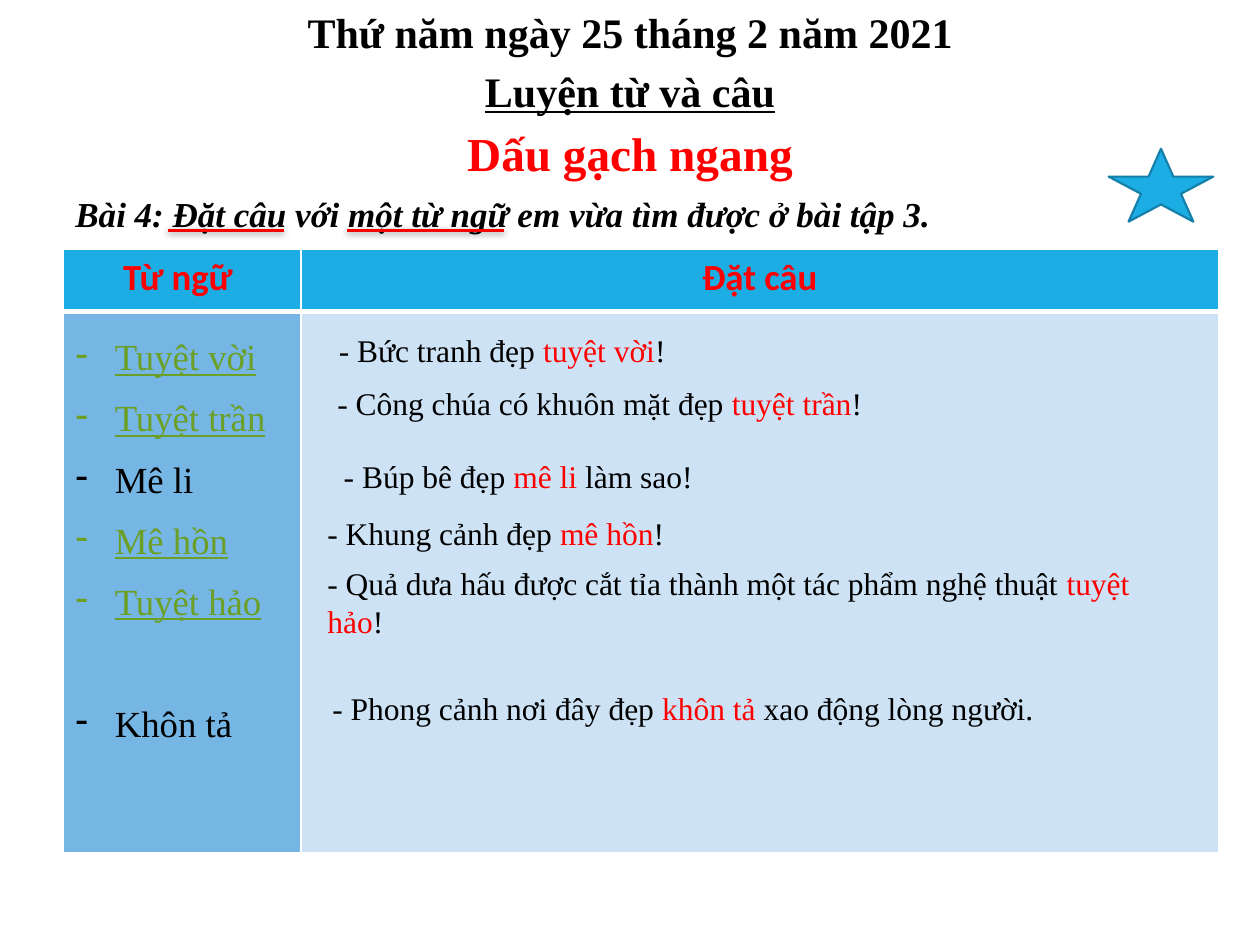
import lxml.etree
import pptx
import pptx.dml.color
import pptx.enum.shapes
import pptx.enum.text
import pptx.oxml
import pptx.oxml.ns
import pptx.util

Cm = pptx.util.Cm
Pt = pptx.util.Pt
qn = pptx.oxml.ns.qn
colours = {
    "black": "000000", "red": "FF0000", "green": "6B9F25", "white": "FFFFFF",
    "blue": "1CADE4", "outline": "1580A9", "words": "75B6E5", "sentences": "CDE3F5",
}
rgb = {name: pptx.dml.color.RGBColor.from_string(value) for name, value in colours.items()}
serif = "Times New Roman"
centre = pptx.enum.text.PP_ALIGN.CENTER


def add_run(paragraph, text, colour, **formats):
    run = paragraph.add_run()
    run.text = text
    run.font.color.rgb = rgb[colour]
    for name, value in formats.items():
        setattr(run.font, name, value)


def add_text_box(left, top, width, height, **margins):
    frame = slide.shapes.add_textbox(Cm(left), Cm(top), Cm(width), Cm(height)).text_frame
    frame.word_wrap = True
    for name, value in margins.items():
        setattr(frame, name, Cm(value))
    return frame.paragraphs[0]


presentation = pptx.Presentation()
presentation.slide_width = Cm(25.4)
presentation.slide_height = Cm(19.05)
slide = presentation.slides.add_slide(presentation.slide_layouts[6])

instruction = add_text_box(1.27, 3.76, 18.21, 1.11)
add_run(instruction, "Bài 4: Đặt câu với một từ ngữ em vừa tìm được ở bài tập 3.", "black",
        name=serif, size=Pt(20), bold=True, italic=True)

table = slide.shapes.add_table(2, 2, Cm(1.27), Cm(5.03), Cm(23.29), Cm(12.17)).table
table.first_row = False
table.horz_banding = False
for column, width in zip(table.columns, (4.8, 18.49)):
    column.width = Cm(width)
for row, height in zip(table.rows, (1.25, 10.92)):
    row.height = Cm(height)

fills = (("blue", "blue"), ("words", "sentences"))
for row_index, row_fills in enumerate(fills):
    for column_index, fill in enumerate(row_fills):
        cell = table.cell(row_index, column_index)
        properties = cell._tc.get_or_add_tcPr()
        for side in "LRTB":
            thick = (row_index, side) in ((0, "B"), (1, "T"))
            border = lxml.etree.SubElement(properties, qn("a:ln" + side), w=str(Pt(3 if thick else 1)))
            solid = lxml.etree.SubElement(border, qn("a:solidFill"))
            lxml.etree.SubElement(solid, qn("a:srgbClr"), val=colours["white"])
        cell.fill.solid()
        cell.fill.fore_color.rgb = rgb[fill]

for column_index, heading in enumerate(("Từ ngữ ", "Đặt câu")):
    paragraph = table.cell(0, column_index).text_frame.paragraphs[0]
    paragraph.alignment = centre
    add_run(paragraph, heading, "red", name="Calibri", size=Pt(21), bold=True)

words = (
    ("Tuyệt vời", "green", 0), ("Tuyệt trần", "green", 0), ("Mê li", "black", 0),
    ("Mê hồn", "green", 0), ("Tuyệt hảo", "green", 0), ("Khôn tả", "black", 35),
)
word_frame = table.cell(1, 0).text_frame
for index, (word, colour, gap) in enumerate(words):
    paragraph = word_frame.add_paragraph() if index else word_frame.paragraphs[0]
    paragraph.line_spacing = 1.5
    paragraph.space_before = Pt(gap)
    properties = paragraph._p.get_or_add_pPr()
    properties.set("marL", str(Cm(0.79)))
    properties.set("indent", str(-Cm(0.79)))
    lxml.etree.SubElement(properties, qn("a:buFontTx"))
    lxml.etree.SubElement(properties, qn("a:buChar"), char="-")
    add_run(paragraph, word, colour, name=serif, size=Pt(21), bold=False, underline=colour == "green")

sentences = (
    (6.58, 6.55, 7.11, 1.02, "- Bức tranh đẹp ", "tuyệt vời", "!"),
    (6.55, 7.62, 16.74, 1.02, "- Công chúa có khuôn mặt đẹp ", "tuyệt trần", "!"),
    (6.68, 9.09, 16.74, 1.02, "- Búp bê đẹp ", "mê li ", "làm sao!"),
    (6.35, 10.24, 16.74, 1.02, "- Khung cảnh đẹp ", "mê hồn", "!"),
    (6.35, 11.25, 16.74, 1.8, "- Quả dưa hấu được cắt tỉa thành một tác phẩm nghệ thuật ", "tuyệt hảo", "!"),
    (6.45, 13.77, 16.74, 1.02, "- Phong cảnh nơi đây đẹp ", "khôn tả ", "xao động lòng người."),
)
for left, top, width, height, *parts in sentences:
    paragraph = add_text_box(left, top, width, height)
    for text, colour in zip(parts, ("black", "red", "black")):
        add_run(paragraph, text, colour, name=serif, size=Pt(18))

for start, end in ((3.38, 5.72), (6.99, 10.16)):
    underline = slide.shapes.add_connector(
        pptx.enum.shapes.MSO_CONNECTOR.STRAIGHT, Cm(start), Cm(4.65), Cm(end), Cm(4.65))
    underline.line.color.rgb = rgb["red"]
    underline.line.width = Pt(1.5)
    effects = lxml.etree.SubElement(underline._element.spPr, qn("a:effectLst"))
    shadow = lxml.etree.SubElement(effects, qn("a:outerShdw"), blurRad=str(Pt(4)), dist=str(Pt(1)),
                                   dir="5400000", rotWithShape="0")
    shade = lxml.etree.SubElement(shadow, qn("a:srgbClr"), val=colours["black"])
    lxml.etree.SubElement(shade, qn("a:alpha"), val="50000")

star = slide.shapes.add_shape(
    pptx.enum.shapes.MSO_SHAPE.STAR_5_POINT, Cm(22.35), Cm(3), Cm(2.11), Cm(1.47))
star.shadow.inherit = False
star.fill.solid()
star.fill.fore_color.rgb = rgb["blue"]
star.line.color.rgb = rgb["outline"]
star.line.width = Pt(1.25)

titles = (
    (0.03, 1.24, "Thứ năm ngày 25 tháng 2 năm 2021", "black", 24, False),
    (1.22, 1.24, "Luyện từ và câu", "black", 24, True),
    (2.41, 1.37, "Dấu gạch ngang", "red", 27, False),
)
for top, height, title, colour, size, underlined in titles:
    paragraph = add_text_box(0, top, 25.4, height, margin_left=0.23, margin_right=0.23,
                             margin_top=0.1, margin_bottom=0.1)
    paragraph.alignment = centre
    paragraph.space_before = Pt(2)
    add_run(paragraph, title, colour, name=serif, size=Pt(size), bold=True, underline=underlined)

presentation.save("out.pptx")
